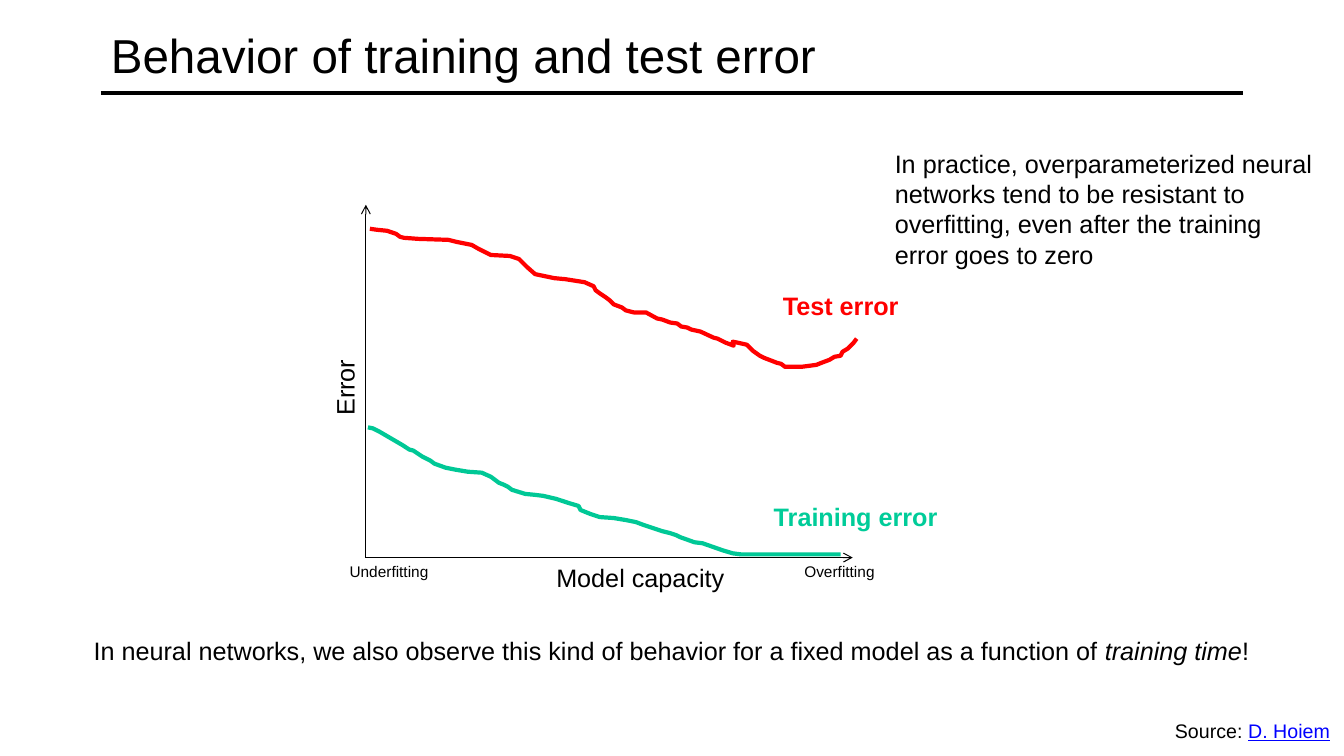
"""Builds a slide on how training and test error change with model capacity."""
from pptx import Presentation
from pptx.dml.color import RGBColor
from pptx.enum.shapes import MSO_CONNECTOR
from pptx.enum.text import MSO_ANCHOR, MSO_AUTO_SIZE, PP_ALIGN
from pptx.oxml.ns import qn
from pptx.util import Cm, Pt
from lxml.etree import SubElement

BLACK = RGBColor(0x00, 0x00, 0x00)
RED = RGBColor(0xFF, 0x00, 0x00)
GREEN = RGBColor(0x00, 0xC8, 0x96)
LABEL_GREEN = RGBColor(0x00, 0xCC, 0x99)
BLUE = RGBColor(0x00, 0x00, 0xFF)
FONT = "Arial"
CURVE_UNIT = Cm(2.54) / 100

TRAINING_CURVE = [
    (365, 424), (370, 425), (376, 428), (400, 442), (406, 446), (410, 447),
    (419, 453), (427, 457), (431, 460), (442, 464), (452, 466), (464, 468),
    (478, 469), (487, 473), (495, 479), (500, 481), (504, 483), (508, 486),
    (521, 490), (531, 491), (539, 492), (552, 495), (564, 499), (574, 502),
    (576, 506), (586, 510), (595, 513), (609, 514), (621, 516), (631, 518),
    (639, 521), (648, 524), (657, 527), (665, 529), (671, 531), (675, 533),
    (689, 538), (697, 539), (717, 546), (727, 549), (735, 550), (834, 550),
]
TEST_CURVE = [
    (367, 227), (374, 228), (384, 229), (393, 232), (397, 235), (401, 236),
    (415, 237), (445, 238), (453, 240), (468, 243), (475, 247), (479, 249),
    (487, 253), (506, 254), (515, 257), (523, 265), (531, 272), (550, 276),
    (561, 277), (580, 280), (589, 284), (591, 288), (595, 291), (601, 295),
    (605, 298), (609, 302), (617, 305), (621, 308), (629, 310), (641, 310),
    (652, 316), (657, 317), (665, 320), (672, 321), (676, 324), (682, 325),
    (686, 327), (695, 329), (708, 335), (712, 336), (716, 338), (720, 340),
    (728, 343), (727, 339), (732, 340), (741, 342), (747, 348), (754, 353),
    (758, 355), (771, 360), (775, 361), (779, 364), (795, 364), (810, 362),
    (815, 360), (823, 357), (828, 354), (834, 353), (836, 349), (841, 346),
    (847, 340), (850, 336),
]


def format_run(r, size, color=BLACK, bold=False, italic=False, underline=False):
    """Set the font of one run."""
    r.font.name = FONT
    r.font.size = Pt(size)
    r.font.color.rgb = color
    r.font.bold = bold
    r.font.italic = italic
    r.font.underline = underline


def add_title(slide, text):
    """Place the title and the rule below it."""
    sp = slide.shapes.title
    sp.left, sp.top, sp.width, sp.height = Cm(2.54), Cm(0.2), Cm(30.05), Cm(2.34)
    tf = sp.text_frame
    tf.text = text
    tf.auto_size = MSO_AUTO_SIZE.NONE
    tf.vertical_anchor = MSO_ANCHOR.MIDDLE
    p = tf.paragraphs[0]
    p.alignment = PP_ALIGN.LEFT
    format_run(p.runs[0], 34)
    add_line(slide, (2.54, 2.34), (31.32, 2.34), 3)


def add_line(slide, start, end, width, arrow=False):
    """Draw a straight line, with an arrowhead at its end if wanted."""
    ends = [Cm(value) for value in (*start, *end)]
    cxn = slide.shapes.add_connector(MSO_CONNECTOR.STRAIGHT, *ends)
    cxn.line.color.rgb = BLACK
    cxn.line.width = Pt(width)
    if arrow:
        SubElement(cxn.line._get_or_add_ln(), qn("a:tailEnd"), type="arrow")
    SubElement(cxn._element.spPr, qn("a:effectLst"))


def add_curve(slide, points, color):
    """Draw an open curve through points in hundredths of an inch."""
    builder = slide.shapes.build_freeform(*points[0], scale=CURVE_UNIT)
    builder.add_line_segments(points[1:], close=False)
    sp = builder.convert_to_shape()
    sp.shadow.inherit = False
    sp.fill.background()
    sp.line.color.rgb = color
    sp.line.width = Pt(3)


def add_text(slide, box, parts, size=18, wrap=False):
    """Add a text box from pairs of text and run format."""
    sp = slide.shapes.add_textbox(*[Cm(value) for value in box])
    tf = sp.text_frame
    tf.word_wrap = wrap
    tf.auto_size = MSO_AUTO_SIZE.SHAPE_TO_FIT_TEXT
    p = tf.paragraphs[0]
    for text, style in parts:
        r = p.add_run()
        r.text = text
        format_run(r, size, **style)
    return sp


def add_error_plot(slide):
    """Draw the axes, the two curves and their labels."""
    add_curve(slide, TRAINING_CURVE, GREEN)
    add_curve(slide, TEST_CURVE, RED)
    origin = (9.22, 14.05)
    add_line(slide, origin, (9.22, 5.16), 0.75, arrow=True)
    add_line(slide, origin, (21.49, 14.05), 0.75, arrow=True)
    add_text(slide, (19.25, 12.5, 4.67, 1.02),
             [("Training error", {"color": LABEL_GREEN, "bold": True})])
    add_text(slide, (19.48, 7.19, 3.45, 1.02),
             [("Test error", {"color": RED, "bold": True})])
    add_text(slide, (13.77, 14.05, 4.78, 1.02), [("Model capacity", {})])
    add_text(slide, (20.02, 14.05, 2.29, 0.74), [("Overfitting", {})], 11)
    add_text(slide, (8.56, 14.05, 2.51, 0.74), [("Underfitting", {})], 11)
    sp = add_text(slide, (7.72, 9.25, 1.93, 1.02), [("Error", {})])
    sp.rotation = 270


def add_notes_and_source(slide):
    """Add the two remarks and the source line."""
    add_text(slide, (29.36, 17.98, 4.45, 0.86),
             [("Source: ", {}), ("D. Hoiem", {"color": BLUE, "underline": True})], 14)
    add_text(slide, (2.11, 15.88, 29.72, 1.02), [
        ("In neural networks, we also observe this kind of behavior "
         "for a fixed model as a function of ", {}),
        ("training time", {"italic": True}),
        ("!", {}),
    ])
    add_text(slide, (22.3, 3.61, 11.13, 3.33), [
        ("In practice, overparameterized neural networks tend to be resistant to "
         "overfitting, even after the training error goes to zero", {}),
    ], wrap=True)


def main():
    """Build and save the slide."""
    prs = Presentation()
    prs.slide_width, prs.slide_height = Cm(33.87), Cm(19.05)
    slide = prs.slides.add_slide(prs.slide_layouts[5])
    add_title(slide, "Behavior of training and test error")
    add_error_plot(slide)
    add_notes_and_source(slide)
    prs.save("out.pptx")


if __name__ == "__main__":
    main()
